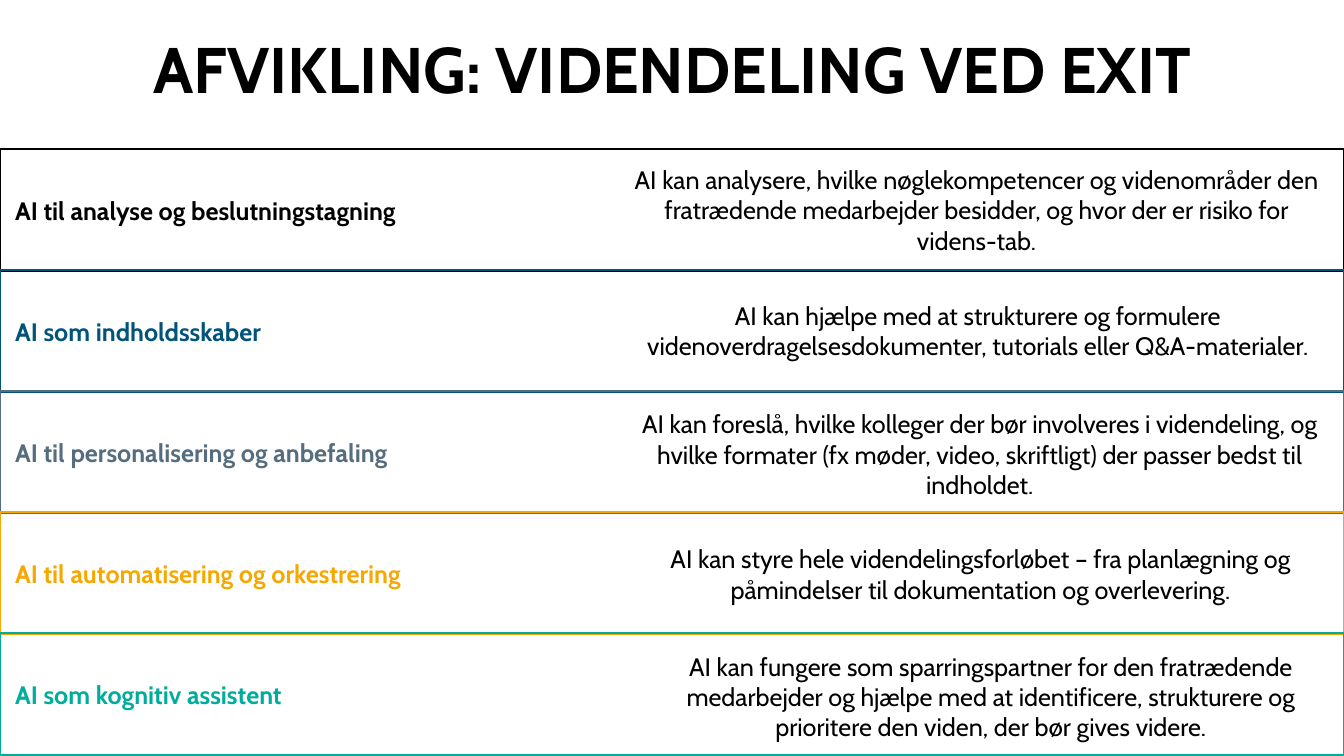
from dataclasses import dataclass

from pptx import Presentation
from pptx.dml.color import RGBColor
from pptx.enum.shapes import MSO_SHAPE
from pptx.enum.text import MSO_ANCHOR, PP_ALIGN
from pptx.util import Cm, Pt


@dataclass(frozen=True)
class Theme:
    font: str = "Cabin"
    black: str = "000000"
    blue: str = "00547A"
    slate: str = "556D7E"
    amber: str = "F6A800"
    teal: str = "00AC9C"
    title_size: float = 46
    body_size: float = 18
    line_width: float = 1.5


THEME = Theme()
PAGE_WIDTH, PAGE_HEIGHT = 33.87, 19.05
BAND_TOP, BAND_PITCH, BAND_HEIGHT = 3.76, 3.05, 3.07
DETAIL_WIDTH, DETAIL_HEIGHT = 17.78, 3.05

ROWS = [
    ("AI til analyse og beslutningstagning", THEME.black, 15.72, 0,
     "AI kan analysere, hvilke nøglekompetencer og videnområder den fratrædende "
     "medarbejder besidder, og hvor der er risiko for videns-tab."),
    ("AI som indholdsskaber", THEME.blue, 15.75, 0,
     "AI kan hjælpe med at strukturere og formulere "
     "videnoverdragelsesdokumenter, tutorials eller Q&A-materialer."),
    ("AI til personalisering og anbefaling", THEME.slate, 15.8, 0.06,
     "AI kan foreslå, hvilke kolleger der bør involveres i videndeling, og hvilke "
     "formater (fx møder, video, skriftligt) der passer bedst til indholdet."),
    ("AI til automatisering og orkestrering", THEME.amber, 15.82, 0.03,
     "AI kan styre hele videndelingsforløbet – fra planlægning og påmindelser "
     "til dokumentation og overlevering."),
    ("AI som kognitiv assistent", THEME.teal, 16.08, 0.07,
     "AI kan fungere som sparringspartner for den fratrædende medarbejder og hjælpe "
     "med at identificere, strukturere og prioritere den viden, der bør gives videre."),
]


class SlideBuilder:
    def __init__(self, deck, theme):
        self.theme = theme
        self.page = deck.slides.add_slide(deck.slide_layouts[5])

    def add_words(self, box, text, size, color, bold=False, align=PP_ALIGN.CENTER, margin=0.25):
        frame = box.text_frame
        frame.word_wrap = True
        frame.vertical_anchor = MSO_ANCHOR.MIDDLE
        frame.margin_left, frame.margin_right = Cm(margin), Cm(0.25)
        para = frame.paragraphs[0]
        para.alignment = align
        span = para.add_run()
        span.text = text
        span.font.name = self.theme.font
        span.font.size = Pt(size)
        span.font.bold = bold
        span.font.color.rgb = RGBColor.from_string(color)

    def title(self, text, height):
        box = self.page.shapes.title
        box.left, box.top, box.width, box.height = 0, 0, Cm(PAGE_WIDTH), Cm(height)
        self.add_words(box, text, self.theme.title_size, self.theme.black, bold=True)

    def band(self, top, text, color):
        box = self.page.shapes.add_shape(
            MSO_SHAPE.RECTANGLE, 0, Cm(top), Cm(PAGE_WIDTH), Cm(BAND_HEIGHT))
        box.shadow.inherit = False
        box.fill.background()
        box.line.color.rgb = RGBColor.from_string(color)
        box.line.width = Pt(self.theme.line_width)
        self.add_words(box, text, self.theme.body_size, color,
                       bold=True, align=PP_ALIGN.LEFT, margin=0.38)

    def detail(self, left, top, text):
        box = self.page.shapes.add_textbox(
            Cm(left), Cm(top), Cm(DETAIL_WIDTH), Cm(DETAIL_HEIGHT))
        self.add_words(box, text, self.theme.body_size, self.theme.black)


def main():
    deck = Presentation()
    deck.slide_width, deck.slide_height = Cm(PAGE_WIDTH), Cm(PAGE_HEIGHT)
    builder = SlideBuilder(deck, THEME)
    builder.title("AFVIKLING: VIDENDELING VED EXIT", 3.4)
    for index, (label, color, left, drop, text) in enumerate(ROWS):
        top = BAND_TOP + index * BAND_PITCH
        builder.band(top, label, color)
        builder.detail(left, top + drop, text)
    deck.save("out.pptx")


if __name__ == "__main__":
    main()
